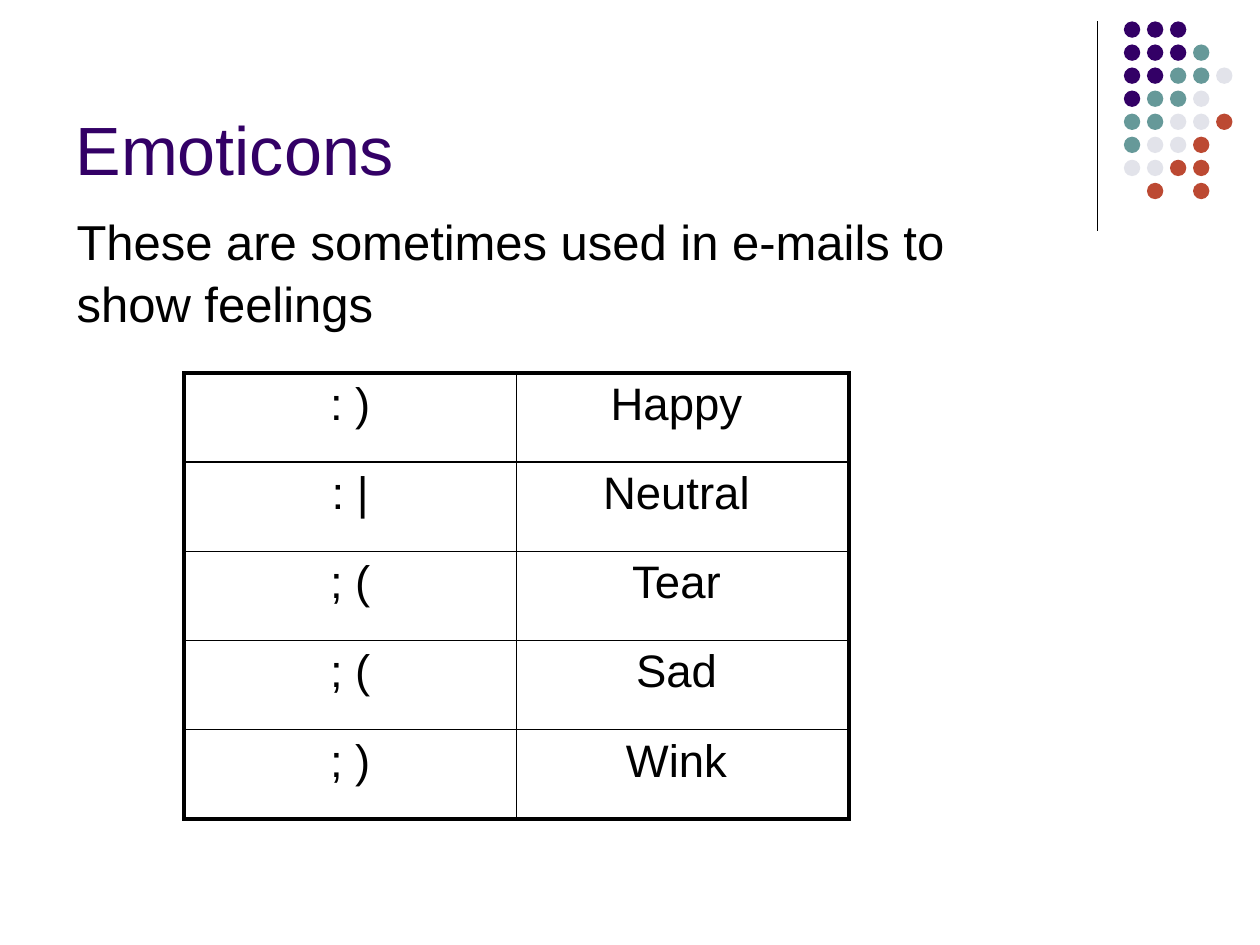
from typing import NamedTuple

import pptx
import pptx.dml.color
import pptx.enum.shapes
import pptx.enum.text
import pptx.oxml
import pptx.oxml.ns
import pptx.util

Inches = pptx.util.Inches
Pt = pptx.util.Pt
RGBColor = pptx.dml.color.RGBColor
Align = pptx.enum.text.PP_ALIGN

BLACK = RGBColor(0x00, 0x00, 0x00)
PURPLE = RGBColor(0x33, 0x00, 0x66)
TEAL = RGBColor(0x66, 0x99, 0x99)
GREY = RGBColor(0xE2, 0xE3, 0xEA)
RED = RGBColor(0xBC, 0x49, 0x32)
FONT = "Arial"

HUES = {"p": PURPLE, "t": TEAL, "g": GREY, "r": RED}
DOTS = ["ppp", "pppt", "ppttg", "pttg", "ttggr", "tggr", "ggrr", " r r"]
DOT_LEFT, DOT_TOP, DOT_STEP, DOT_SIZE = 8.92, 0.17, 0.183, 0.13

THIN, THICK = Pt(1), Pt(2.25)


class Mood(NamedTuple):
    face: str
    name: str


MOODS = [
    Mood(": )", "Happy "),
    Mood(": |", "Neutral "),
    Mood("; (", "Tear "),
    Mood("; (", "Sad "),
    Mood("; )", "Wink "),
]


def write(frame, text: str, size: float, color: RGBColor, align=Align.LEFT):
    """Set one paragraph of text and return it."""
    frame.text = text
    line = frame.paragraphs[0]
    line.alignment = align
    font = line.runs[0].font
    font.name, font.size = FONT, Pt(size)
    font.color.rgb = color
    return line


def add_rule(slide) -> None:
    rule = slide.shapes.add_connector(
        pptx.enum.shapes.MSO_CONNECTOR.STRAIGHT,
        Inches(8.71), Inches(0.17), Inches(8.71), Inches(1.83))
    rule.line.color.rgb = BLACK
    rule.line.width = Pt(0.75)
    props = rule.element.spPr
    props.append(props.makeelement(pptx.oxml.ns.qn("a:effectLst"), {}))


def add_dots(slide) -> None:
    group = slide.shapes.add_group_shape()
    for row, keys in enumerate(DOTS):
        for col, key in enumerate(keys):
            if key not in HUES:
                continue
            dot = group.shapes.add_shape(
                pptx.enum.shapes.MSO_SHAPE.OVAL,
                Inches(DOT_LEFT + col * DOT_STEP),
                Inches(DOT_TOP + row * DOT_STEP),
                Inches(DOT_SIZE), Inches(DOT_SIZE))
            dot.shadow.inherit = False
            dot.fill.solid()
            dot.fill.fore_color.rgb = HUES[key]
            dot.line.fill.background()


def set_edges(cell, widths: dict[str, int]) -> None:
    """Draw cell borders; widths are keyed L, R, T, B in that order."""
    props = cell._tc.get_or_add_tcPr()
    space = pptx.oxml.ns.nsdecls("a")
    for spot, (side, width) in enumerate(widths.items()):
        props.insert(spot, pptx.oxml.parse_xml(
            f'<a:ln{side} {space} w="{width}"><a:solidFill>'
            f'<a:srgbClr val="{BLACK}"/></a:solidFill></a:ln{side}>'))


def add_moods(slide) -> None:
    rows, cols = len(MOODS), len(Mood._fields)
    table = slide.shapes.add_table(
        rows, cols, Inches(1.46), Inches(2.96),
        Inches(5.28), Inches(3.54)).table
    table.first_row = table.horz_banding = False
    for row, mood in enumerate(MOODS):
        for col, text in enumerate(mood):
            cell = table.cell(row, col)
            write(cell.text_frame, text, 26, BLACK, Align.CENTER)
            cell.fill.background()
            set_edges(cell, {
                "L": THICK if col == 0 else THIN,
                "R": THICK if col == cols - 1 else THIN,
                "T": THICK if row == 0 else THIN,
                "B": THICK if row == rows - 1 else THIN,
            })


def add_title(slide) -> None:
    title = slide.shapes.title
    title.left, title.top = Inches(0.5), Inches(0.13)
    title.width, title.height = Inches(8.25), Inches(1.42)
    title.text_frame.vertical_anchor = pptx.enum.text.MSO_ANCHOR.BOTTOM
    write(title.text_frame, "Emoticons", 39, PURPLE)


def add_intro(slide) -> None:
    box = slide.shapes.add_textbox(
        Inches(0.51), Inches(1.61), Inches(7.95), Inches(1.03))
    box.text_frame.word_wrap = True
    line = write(
        box.text_frame,
        "These are sometimes used in e-mails to show feelings", 28, BLACK)
    line.line_spacing = 1.05


def main() -> None:
    deck = pptx.Presentation()
    deck.slide_width, deck.slide_height = Inches(10), Inches(7.5)
    slide = deck.slides.add_slide(deck.slide_layouts.get_by_name("Title Only"))
    add_rule(slide)
    add_dots(slide)
    add_title(slide)
    add_moods(slide)
    add_intro(slide)
    deck.save("out.pptx")


if __name__ == "__main__":
    main()
